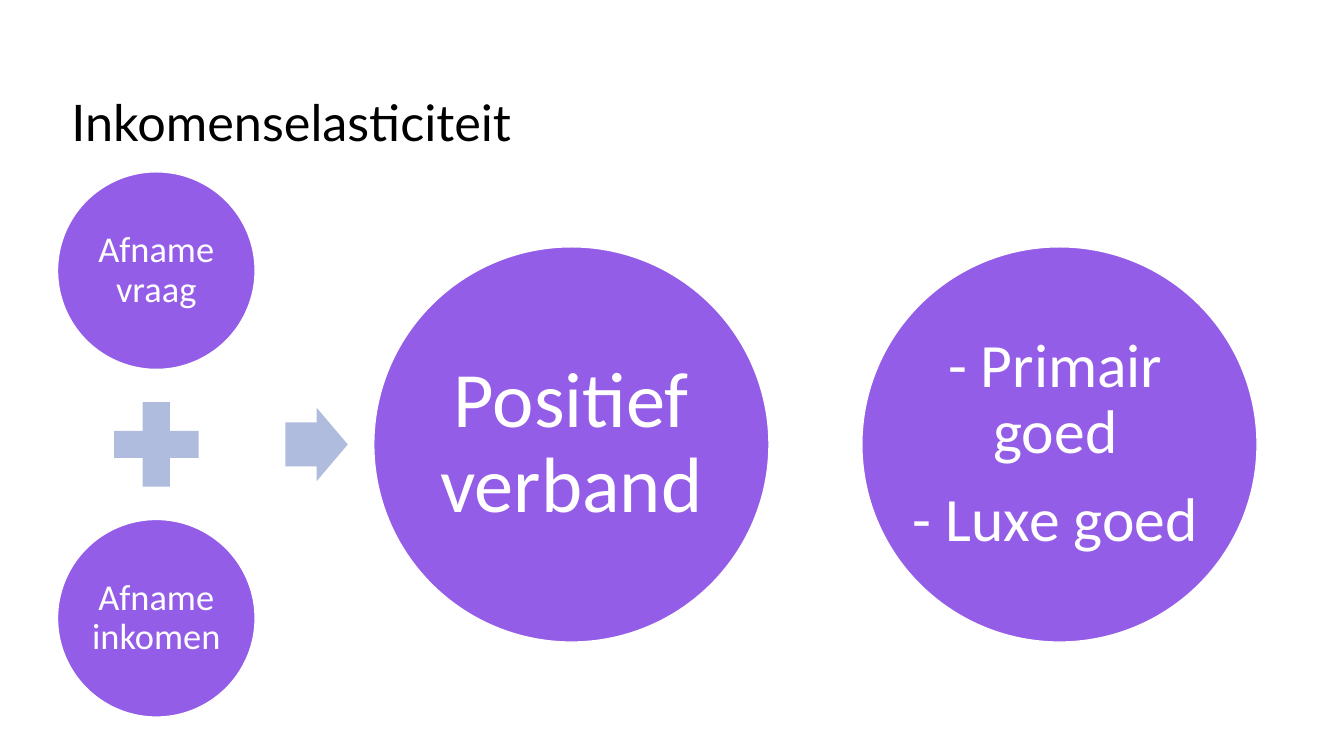
from pptx import Presentation
from pptx.dml.color import RGBColor
from pptx.enum.shapes import MSO_SHAPE
from pptx.enum.text import MSO_ANCHOR, PP_ALIGN
from pptx.util import Cm, Pt

OVAL = MSO_SHAPE.OVAL
PLUS = MSO_SHAPE.MATH_PLUS
ARROW = MSO_SHAPE.RIGHT_ARROW
MIDDLE = MSO_ANCHOR.MIDDLE
CENTER = PP_ALIGN.CENTER


def color(code):
    return RGBColor.from_string(code)


class Board:
    purple, pale, white, black = "945DE8", "B0BCDE", "FFFFFF", "000000"
    inner = 0.5 ** 0.5  # side of the square inside a circle of size 1

    def __init__(self, slide):
        self.slide = slide

    def title(self, text, x, y, w, h):
        box = self.slide.shapes.add_textbox(Cm(x), Cm(y), Cm(w), Cm(h))
        frame = box.text_frame
        frame.word_wrap = True
        frame.text = text
        self.font(frame.paragraphs[0], "Lato", 36, self.black)

    def font(self, para, name, size, code):
        para.font.name = name
        para.font.size = Pt(size)
        para.font.color.rgb = color(code)

    def shape(self, kind, cx, cy, w, h, fill):
        """Place a plain shape around its centre."""
        shape = self.slide.shapes.add_shape(
            kind, Cm(cx - w / 2), Cm(cy - h / 2), Cm(w), Cm(h))
        shape.shadow.inherit = False
        shape.fill.solid()
        shape.fill.fore_color.rgb = color(fill)
        shape.line.fill.background()
        return shape

    def circle(self, cx, cy, size):
        shape = self.shape(OVAL, cx, cy, size, size, self.purple)
        shape.line.color.rgb = color(self.white)
        shape.line.width = Pt(1)

    def label(self, lines, cx, cy, w, h, size, inset):
        """Place centred white text around its centre."""
        box = self.slide.shapes.add_textbox(
            Cm(cx - w / 2), Cm(cy - h / 2), Cm(w), Cm(h))
        frame = box.text_frame
        frame.word_wrap = True
        frame.vertical_anchor = MIDDLE
        frame.margin_left = frame.margin_right = Cm(inset)
        frame.margin_top = frame.margin_bottom = Cm(inset)
        frame.text = "\n".join(lines)
        for para in frame.paragraphs:
            para.alignment = CENTER
            para.line_spacing = 0.9
            self.font(para, "Calibri", size, self.white)
        for para in frame.paragraphs[:-1]:
            para.space_after = Pt(0.35 * size)

    def bubble(self, text, cx, cy, size, points, inset):
        self.circle(cx, cy, size)
        side = size * self.inner
        self.label([text], cx, cy, side, side, points, inset)


def main():
    deck = Presentation()
    deck.slide_width, deck.slide_height = Cm(33.87), Cm(19.05)
    board = Board(deck.slides.add_slide(deck.slide_layouts[6]))
    board.title("Inkomenselasticiteit", 1.55, 2.18, 26.8, 3.33)

    # Causes: two small circles around a plus
    left, mid, step = 3.94, 11.2, 4.38
    small, big = 4.98, 9.96
    board.bubble("Afname vraag", left, mid - step, small, 26, 0.1)
    board.shape(PLUS, left, mid, 2.9, 2.9, board.pale)
    board.bubble("Afname inkomen", left, mid + step, small, 26, 0.1)

    # Result
    arrow = board.shape(ARROW, 7.98, mid, 1.57, 1.85, board.pale)
    arrow.adjustments[0] = 0.6
    board.bubble("Positief verband", 14.4, mid, big, 56, 0.2)

    # Kinds of goods, with a wider label
    board.circle(26.7, mid, big)
    board.label(["- Primair goed", "- Luxe goed"],
                26.6, mid, 9.07, 7.04, 44, 0.2)

    deck.save("out.pptx")


if __name__ == "__main__":
    main()
